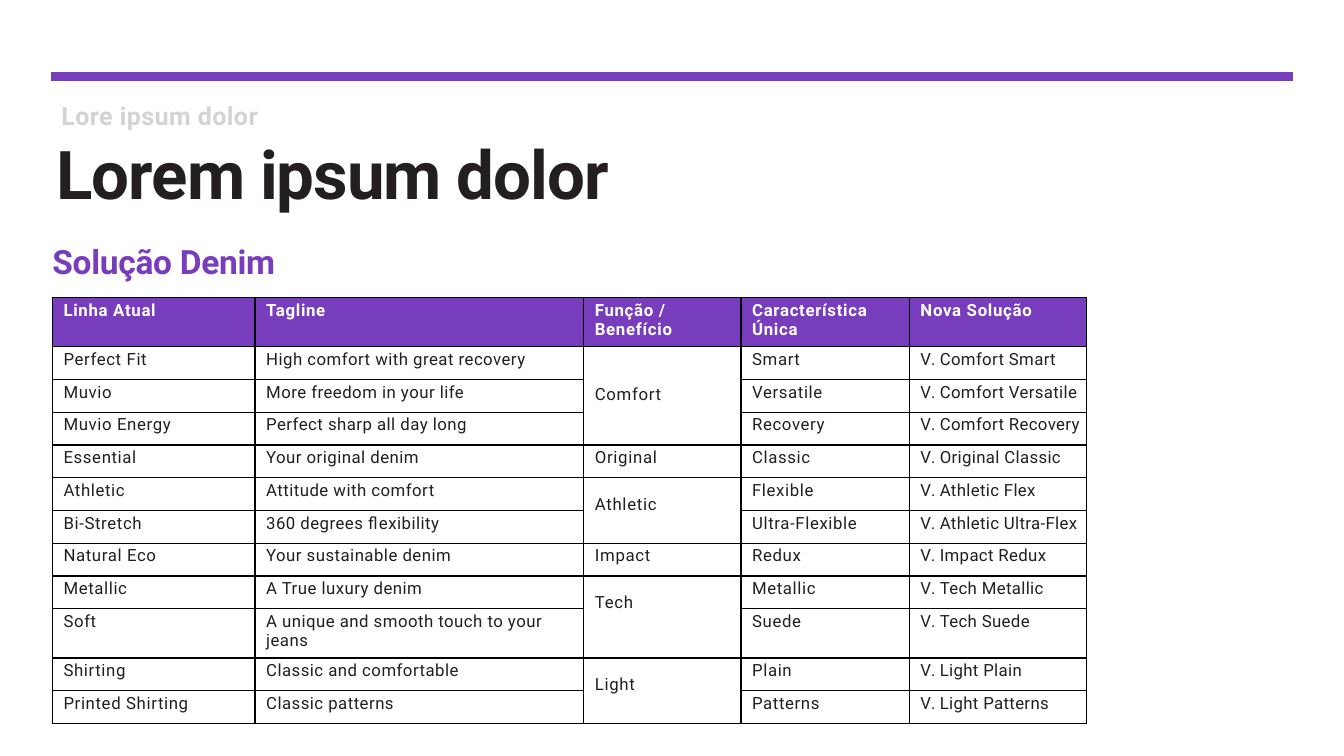
"""Build the denim solution slide with its table of current and new product lines."""
from dataclasses import dataclass

from lxml.etree import SubElement
from pptx import Presentation
from pptx.dml.color import RGBColor
from pptx.enum.shapes import MSO_CONNECTOR
from pptx.enum.text import MSO_ANCHOR
from pptx.oxml.ns import qn
from pptx.slide import Slide
from pptx.table import _Cell
from pptx.text.text import _Paragraph
from pptx.util import Inches, Pt

PURPLE, INK, GRAY, WHITE, BLACK = "773DBD", "231F20", "D1D3D4", "FFFFFF", "000000"
FONT = "Roboto"


@dataclass
class Heading:
    text: str
    left: float
    top: float
    width: float
    height: float
    size: float
    color: str
    spacing: float
    anchor: MSO_ANCHOR = MSO_ANCHOR.TOP


@dataclass
class Column:
    title: str
    width: float
    spacing: float


@dataclass
class Benefit:
    name: str
    first_row: int
    row_count: int
    top_margin: float


HEADINGS = [
    Heading("Lore ipsum dolor", 0.6, 0.99, 3.13, 0.31, 17.9, GRAY, 0.3),
    Heading("Solução Denim", 0.51, 2.38, 2.71, 0.41, 23.9, PURPLE, -0.2),
    Heading("Lorem ipsum dolor", 0.55, 1.3, 6.11, 0.82, 48, INK, -0.7, MSO_ANCHOR.MIDDLE),
]
COLUMNS = [
    Column("Linha Atual", 2.01, 0.45),
    Column("Tagline", 3.26, 0.35),
    Column("Função / Benefício", 1.56, 0.5),
    Column("Característica Única", 1.67, 0.45),
    Column("Nova Solução", 1.76, 0.25),
]
BENEFIT_COLUMN, SOLUTION_COLUMN = 2, 4
LINES = [
    ("Perfect Fit", "High comfort with great recovery", "Smart", "Comfort Smart"),
    ("Muvio", "More freedom in your life", "Versatile", "Comfort Versatile"),
    ("Muvio Energy", "Perfect sharp all day long", "Recovery", "Comfort Recovery"),
    ("Essential", "Your original denim", "Classic", "Original Classic"),
    ("Athletic", "Attitude with comfort", "Flexible", "Athletic Flex"),
    ("Bi-Stretch", "360 degrees flexibility", "Ultra-Flexible", "Athletic Ultra-Flex"),
    ("Natural Eco", "Your sustainable denim", "Redux", "Impact Redux"),
    ("Metallic", "A True luxury denim", "Metallic", "Tech Metallic"),
    ("Soft", "A unique and smooth touch to your jeans", "Suede", "Tech Suede"),
    ("Shirting", "Classic and comfortable", "Plain", "Light Plain"),
    ("Printed Shirting", "Classic patterns", "Patterns", "Light Patterns"),
]
BENEFITS = [
    Benefit("Comfort", 1, 3, 0.38),
    Benefit("Original", 4, 1, 0.03),
    Benefit("Athletic", 5, 2, 0.17),
    Benefit("Impact", 7, 1, 0.03),
    Benefit("Tech", 8, 2, 0.17),
    Benefit("Light", 10, 2, 0.17),
]
TALL_ROWS = (0, 9)
TALL_HEIGHT, ROW_HEIGHT = 0.49, 0.325


def rgb(color: str) -> RGBColor:
    return RGBColor.from_string(color)


def add_text(paragraph: _Paragraph, text: str, *, size: float = 12, color: str = INK,
             bold: bool = False, spacing: float = 0) -> None:
    run = paragraph.add_run()
    run.text = text
    run.font.name = FONT
    run.font.size = Pt(size)
    run.font.bold = bold
    run.font.color.rgb = rgb(color)
    run.font._element.set("spc", str(round(spacing * 100)))


def add_heading(slide: Slide, heading: Heading) -> None:
    box = slide.shapes.add_textbox(Inches(heading.left), Inches(heading.top),
                                   Inches(heading.width), Inches(heading.height))
    frame = box.text_frame
    frame.word_wrap = True
    frame.vertical_anchor = heading.anchor
    frame.margin_left = frame.margin_top = Inches(0.01)
    frame.margin_right = frame.margin_bottom = 0
    add_text(frame.paragraphs[0], heading.text, size=heading.size, color=heading.color,
             bold=True, spacing=heading.spacing)


def add_rule(slide: Slide) -> None:
    rule = slide.shapes.add_connector(MSO_CONNECTOR.STRAIGHT, Inches(0.51), Inches(0.76),
                                      Inches(12.82), Inches(0.76))
    rule.line.color.rgb = rgb(PURPLE)
    rule.line.width = Pt(6)
    SubElement(rule._element.spPr, qn("a:effectLst"))


def style_cell(cell: _Cell, fill: str | None) -> None:
    properties = cell._tc.get_or_add_tcPr()
    for side in ("lnL", "lnR", "lnT", "lnB"):
        border = SubElement(properties, qn(f"a:{side}"), w=str(Pt(1)))
        SubElement(SubElement(border, qn("a:solidFill")), qn("a:srgbClr"), val=BLACK)
    if fill:
        cell.fill.solid()
        cell.fill.fore_color.rgb = rgb(fill)
    else:
        cell.fill.background()
    cell.margin_left, cell.margin_top = Inches(0.11), Inches(0.03)
    cell.margin_right = cell.margin_bottom = 0


def add_line_table(slide: Slide) -> None:
    heights = [TALL_HEIGHT if row in TALL_ROWS else ROW_HEIGHT for row in range(len(LINES) + 1)]
    frame = slide.shapes.add_table(len(heights), len(COLUMNS), Inches(0.52), Inches(2.95),
                                   Inches(sum(column.width for column in COLUMNS)),
                                   Inches(sum(heights)))
    table = frame.table
    for row, height in enumerate(heights):
        table.rows[row].height = Inches(height)
        for index in range(len(COLUMNS)):
            style_cell(table.cell(row, index), None if row else PURPLE)

    for index, column in enumerate(COLUMNS):
        table.columns[index].width = Inches(column.width)
        add_text(table.cell(0, index).text_frame.paragraphs[0], column.title,
                 color=WHITE, bold=True, spacing=0.5)

    line_columns = [index for index in range(len(COLUMNS)) if index != BENEFIT_COLUMN]
    for row, line in enumerate(LINES, start=1):
        for index, text in zip(line_columns, line):
            paragraph = table.cell(row, index).text_frame.paragraphs[0]
            if index == SOLUTION_COLUMN:
                add_text(paragraph, "V", spacing=-0.9)
                add_text(paragraph, ". ")
            add_text(paragraph, text, spacing=COLUMNS[index].spacing)

    for benefit in BENEFITS:
        cell = table.cell(benefit.first_row, BENEFIT_COLUMN)
        if benefit.row_count > 1:
            last_row = benefit.first_row + benefit.row_count - 1
            cell.merge(table.cell(last_row, BENEFIT_COLUMN))
        cell.margin_top = Inches(benefit.top_margin)
        add_text(cell.text_frame.paragraphs[0], benefit.name,
                 spacing=COLUMNS[BENEFIT_COLUMN].spacing)


def main() -> None:
    presentation = Presentation()
    presentation.slide_width, presentation.slide_height = Inches(13.33), Inches(7.5)
    slide = presentation.slides.add_slide(presentation.slide_layouts[6])
    add_rule(slide)
    add_line_table(slide)
    for heading in HEADINGS:
        add_heading(slide, heading)
    presentation.save("out.pptx")


if __name__ == "__main__":
    main()
